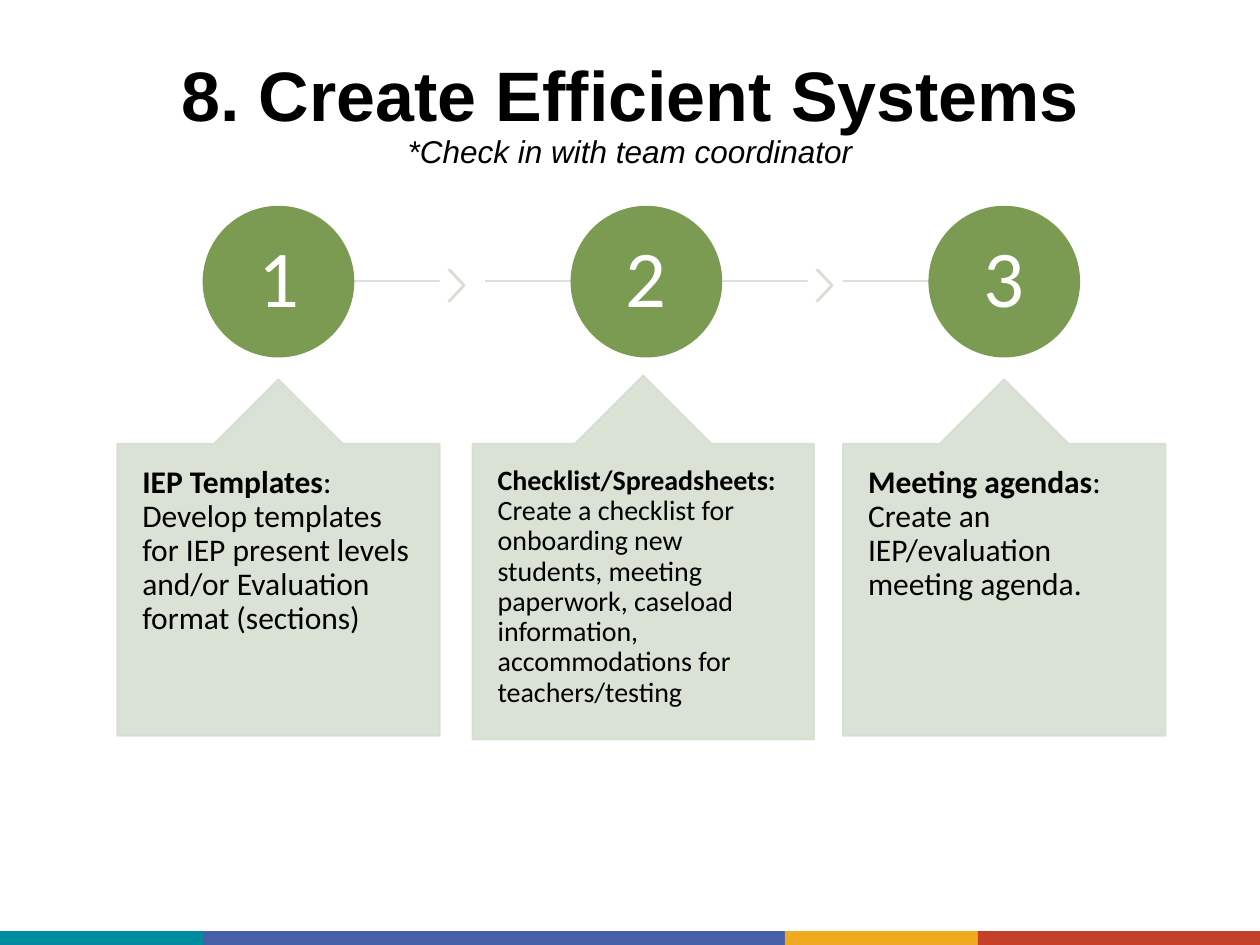
"""Build the three-step slide on efficient systems, on a grid of 100 columns by 75 rows."""
import dataclasses
import typing

import lxml.etree
import pptx
import pptx.dml.color
import pptx.enum.shapes
import pptx.enum.text
import pptx.oxml.ns
import pptx.util

Shapes = pptx.enum.shapes.MSO_SHAPE
Align = pptx.enum.text.PP_ALIGN
Anchor = pptx.enum.text.MSO_ANCHOR


@dataclasses.dataclass(frozen=True)
class Theme:
    green: str = "7C9B52"
    pale: str = "D7DED1"
    black: str = "000000"
    white: str = "FFFFFF"
    teal: str = "008CA0"
    blue: str = "455FA9"
    amber: str = "EFAA1F"
    red: str = "C63F28"
    pale_opacity: int = 90
    heading_font: str = "Arial"
    body_font: str = "Calibri"
    title_size: int = 40
    subtitle_size: int = 18
    number_size: int = 46
    line_spacing: float = 0.9


@dataclasses.dataclass(frozen=True)
class Frame:
    column: float
    row: float
    columns: float
    rows: float


@dataclasses.dataclass(frozen=True)
class Step:
    number: str
    heading: str
    detail: str
    size: int
    center: float
    card: Frame
    track: tuple[float, float]
    chevron: float | None = None


class Span(typing.NamedTuple):
    text: str
    size: int
    bold: bool = False
    italic: bool = False


THEME = Theme()
COLUMNS, ROWS = 100, 75
CELL = pptx.util.Inches(0.1)
CIRCLE_ROW, CIRCLE_SIZE = 16.4, 11.9
TRACK_ROW = 22.3
BAND_ROW = 73.9
BANDS = [(THEME.teal, 16.1), (THEME.blue, 46.2), (THEME.amber, 15.3), (THEME.red, 22.4)]
STEPS = [
    Step("1", "IEP Templates",
         ": Develop templates for IEP present levels and/or Evaluation format (sections)",
         18, 22.1, Frame(9.3, 30.1, 25.6, 28.3), (23.5, 34.9), 35.6),
    Step("2", "Checklist/Spreadsheets: ",
         "Create a checklist for onboarding new students, meeting paperwork, caseload "
         "information, accommodations for teachers/testing",
         16, 51.3, Frame(37.5, 29.8, 27.1, 28.9), (38.5, 64.1), 64.8),
    Step("3", "Meeting agendas", ": Create an IEP/evaluation meeting agenda.",
         18, 79.7, Frame(66.9, 30.1, 25.6, 28.3), (66.9, 79.7)),
]


def cells(count: float) -> int:
    """Convert a count of grid cells to a length."""
    return round(count * CELL)


def corners(frame: Frame) -> list[int]:
    """Return left, top, width and height of a frame."""
    return [cells(value) for value in dataclasses.astuple(frame)]


def set_opacity(color_format, percent: int) -> None:
    """Make a solid fill colour partly transparent."""
    color = color_format._xFill.find(".//" + pptx.oxml.ns.qn("a:srgbClr"))
    lxml.etree.SubElement(color, pptx.oxml.ns.qn("a:alpha"), val=str(percent * 1000))


def paint(fill, color: str, opacity: int = 100) -> None:
    """Fill with one solid colour."""
    fill.solid()
    fill.fore_color.rgb = pptx.dml.color.RGBColor.from_string(color)
    if opacity < 100:
        set_opacity(fill.fore_color, opacity)


def add_block(page, kind, frame: Frame, color: str, *, opacity: int = 100,
              adjustments: tuple[float, ...] = (), outlined: bool = True):
    """Draw a flat preset shape with an outline of its own colour."""
    block = page.shapes.add_shape(kind, *corners(frame))
    block.shadow.inherit = False
    paint(block.fill, color, opacity)
    if outlined:
        block.line.width = pptx.util.Pt(1)
        paint(block.line.fill, color, opacity)
    else:
        block.line.fill.background()
    for index, value in enumerate(adjustments):
        block.adjustments[index] = value
    return block


def add_track(page, start: float, end: float) -> None:
    """Draw a pale horizontal line between two columns."""
    row = cells(TRACK_ROW)
    track = page.shapes.add_connector(
        pptx.enum.shapes.MSO_CONNECTOR.STRAIGHT, cells(start), row, cells(end), row)
    track.line.width = pptx.util.Pt(1)
    paint(track.line.fill, THEME.pale, THEME.pale_opacity)
    lxml.etree.SubElement(track._element.spPr, pptx.oxml.ns.qn("a:effectLst"))


def write(box, spans: list[Span], *, font: str, color: str, align=Align.LEFT,
          anchor=Anchor.TOP, inset: tuple[float, float] = (0.5, 0.5),
          separate_lines: bool = False) -> None:
    """Write formatted spans as one paragraph, or as one line each."""
    text_frame = box.text_frame
    text_frame.word_wrap = True
    text_frame.vertical_anchor = anchor
    text_frame.margin_left = text_frame.margin_right = cells(inset[0])
    text_frame.margin_top = text_frame.margin_bottom = cells(inset[1])
    para = text_frame.paragraphs[0]
    para.alignment = align
    para.line_spacing = THEME.line_spacing
    for index, span in enumerate(spans):
        if separate_lines and index:
            para.add_line_break()
        run = para.add_run()
        run.text = span.text
        run.font.name = font
        run.font.size = pptx.util.Pt(span.size)
        run.font.bold = span.bold
        run.font.italic = span.italic
        run.font.color.rgb = pptx.dml.color.RGBColor.from_string(color)


def add_step(page, step: Step) -> None:
    """Draw a step's track, chevron, numbered circle and callout card."""
    add_track(page, *step.track)
    if step.chevron is not None:
        add_block(page, Shapes.CHEVRON, Frame(step.chevron, 21.4, 1.3, 2.5), THEME.pale,
                  opacity=THEME.pale_opacity, adjustments=(0.9,))
    circle = add_block(
        page, Shapes.OVAL,
        Frame(step.center - CIRCLE_SIZE / 2, CIRCLE_ROW, CIRCLE_SIZE, CIRCLE_SIZE),
        THEME.green)
    write(circle, [Span(step.number, THEME.number_size)], font=THEME.body_font,
          color=THEME.white, align=Align.CENTER, anchor=Anchor.MIDDLE)
    card = add_block(page, Shapes.UP_ARROW_CALLOUT, step.card, THEME.pale,
                     opacity=THEME.pale_opacity, adjustments=(0.5, 0.2, 0.2, 1))
    write(card, [Span(step.heading, step.size, bold=True), Span(step.detail, step.size)],
          font=THEME.body_font, color=THEME.black, inset=(2, 1.8))


def main() -> None:
    """Build and save the deck."""
    deck = pptx.Presentation()
    deck.slide_width, deck.slide_height = cells(COLUMNS), cells(ROWS)
    page = deck.slides.add_slide(deck.slide_layouts[6])
    column = 0.0
    for color, width in BANDS:
        add_block(page, Shapes.RECTANGLE, Frame(column, BAND_ROW, width, ROWS - BAND_ROW),
                  color, outlined=False)
        column += width
    title = page.shapes.add_textbox(*corners(Frame(6.9, 4, 86.2, 10.4)))
    write(title, [Span("8. Create Efficient Systems", THEME.title_size, bold=True),
                  Span("*Check in with team coordinator", THEME.subtitle_size, italic=True)],
          font=THEME.heading_font, color=THEME.black, align=Align.CENTER,
          anchor=Anchor.MIDDLE, separate_lines=True)
    for step in STEPS:
        add_step(page, step)
    deck.save("out.pptx")


if __name__ == "__main__":
    main()
